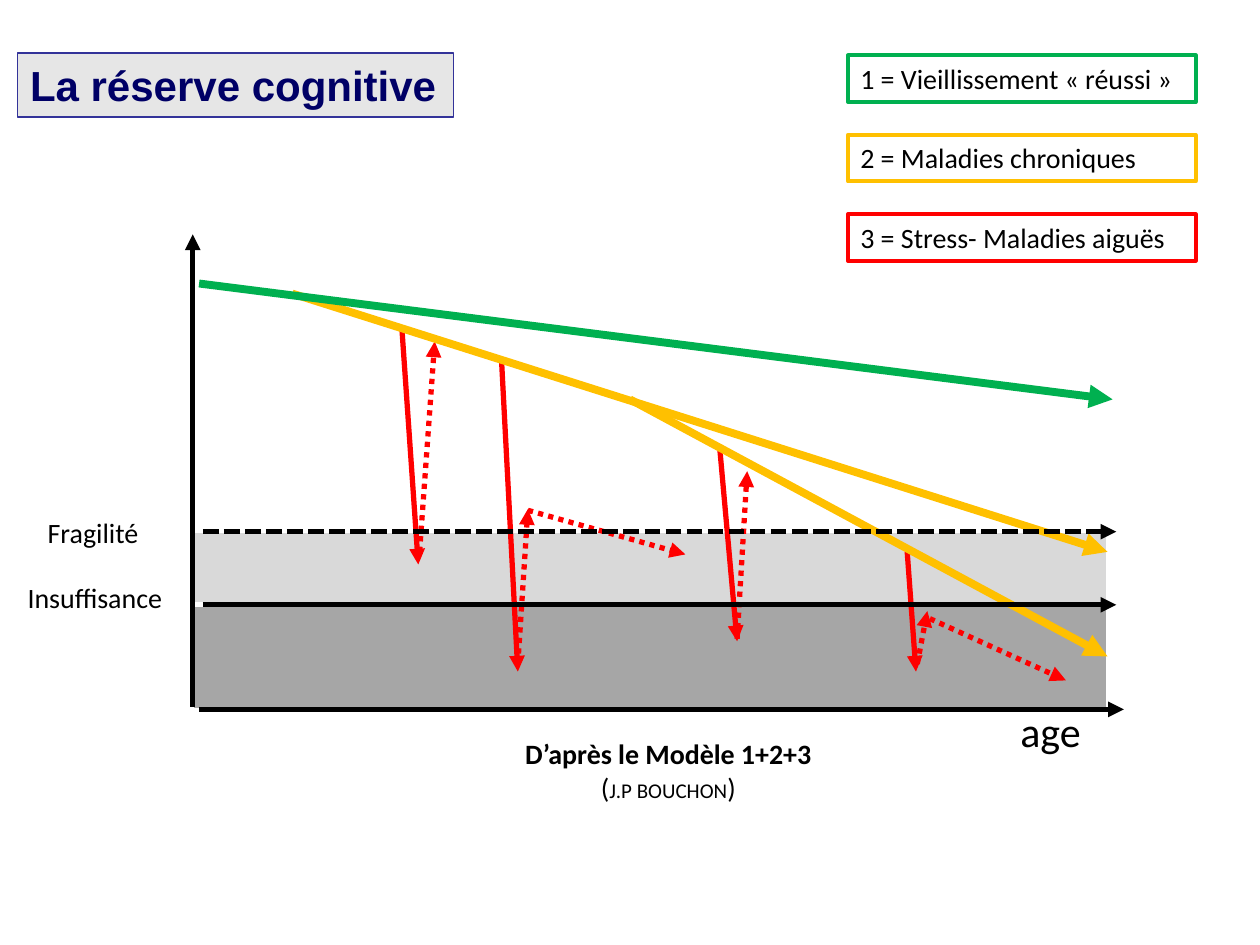
from lxml import etree
from pptx import Presentation
from pptx.dml.color import RGBColor
from pptx.enum.dml import MSO_LINE
from pptx.enum.shapes import MSO_CONNECTOR, MSO_SHAPE
from pptx.enum.text import MSO_ANCHOR, PP_ALIGN
from pptx.oxml.ns import qn
from pptx.util import Inches, Pt

BLACK = RGBColor(0x00, 0x00, 0x00)
WHITE = RGBColor(0xFF, 0xFF, 0xFF)
RED = RGBColor(0xFF, 0x00, 0x00)
AMBER = RGBColor(0xFF, 0xC0, 0x00)
GREEN = RGBColor(0x00, 0xB0, 0x50)
NAVY = RGBColor(0x00, 0x00, 0x66)
INDIGO = RGBColor(0x33, 0x33, 0x99)
PALE_GREY = RGBColor(0xE6, 0xE6, 0xE6)
LIGHT_GREY = RGBColor(0xD9, 0xD9, 0xD9)
MID_GREY = RGBColor(0xA6, 0xA6, 0xA6)

deck = Presentation()
deck.slide_width = Inches(10)
deck.slide_height = Inches(7.5)
page = deck.slides.add_slide(deck.slide_layouts[5])


def add_box(bounds, text="", size=16, fill=None, line=None, line_width=2.25, color=BLACK, font="Calibri"):
    box = page.shapes.add_shape(MSO_SHAPE.RECTANGLE, *map(Inches, bounds))
    box.shadow.inherit = False
    if fill is None:
        box.fill.background()
    else:
        box.fill.solid()
        box.fill.fore_color.rgb = fill
    if line is None:
        box.line.fill.background()
    else:
        box.line.color.rgb = line
        box.line.width = Pt(line_width)
    frame = box.text_frame
    frame.text = text
    frame.word_wrap = True
    frame.vertical_anchor = MSO_ANCHOR.TOP
    para = frame.paragraphs[0]
    para.alignment = PP_ALIGN.LEFT
    para.font.name = font
    para.font.size = Pt(size)
    para.font.color.rgb = color
    return box


def add_arrow(start, end, color=BLACK, width=3, dash=None):
    arrow = page.shapes.add_connector(MSO_CONNECTOR.STRAIGHT, *map(Inches, start + end))
    arrow.line.color.rgb = color
    arrow.line.width = Pt(width)
    if dash is not None:
        arrow.line.dash_style = dash
    etree.SubElement(arrow.line._get_or_add_ln(), qn("a:tailEnd"), type="triangle")
    etree.SubElement(arrow._element.spPr, qn("a:effectLst"))


caption = page.shapes.title
caption.left, caption.top = Inches(3.22), Inches(5.81)
caption.width, caption.height = Inches(4.17), Inches(0.61)
caption.text_frame.vertical_anchor = MSO_ANCHOR.MIDDLE
para = caption.text_frame.paragraphs[0]
para.alignment = PP_ALIGN.CENTER
for text, size, bold in [
    ("D’après le Modèle 1+2+3", 16, True),
    ("(", 16, False),
    ("J.P BOUCHON", 12, False),
    (")", 16, False),
]:
    span = para.add_run()
    span.text = text
    span.font.name = "Calibri"
    span.font.size = Pt(size)
    span.font.bold = bold
    span.font.color.rgb = BLACK
    if bold:
        para.add_line_break()

heading = add_box((0.14, 0.42, 3.46, 0.51), "La réserve cognitive", 24, PALE_GREY, INDIGO, 0.75, NAVY, "Arial")
heading.text_frame.word_wrap = False
heading.text_frame.paragraphs[0].font.bold = True

add_box((1.53, 4.22, 7.26, 0.57), fill=LIGHT_GREY, line=WHITE, line_width=2)
add_box((1.53, 4.8, 7.26, 0.83), fill=MID_GREY, line=WHITE, line_width=2)

legend = [
    ("1 = Vieillissement « réussi »", GREEN),
    ("2 = Maladies chroniques", AMBER),
    ("3 = Stress- Maladies aiguës", RED),
]
for row, (text, color) in enumerate(legend):
    add_box((6.73, 0.44 + 0.63 * row, 2.76, 0.37), text, line=color)

acute_drops = [
    ((5.71, 3.53), (5.85, 5.09)),
    ((3.19, 2.61), (3.32, 4.48)),
    ((7.2, 4.38), (7.27, 5.33)),
    ((3.98, 2.85), (4.11, 5.33)),
]
for start, end in acute_drops:
    add_arrow(start, end, RED)

recoveries = [
    ((5.85, 5.07), (5.93, 3.74)),
    ((3.33, 4.38), (3.45, 2.71)),
    ((7.28, 5.27), (7.36, 4.85)),
    ((4.11, 5.27), (4.19, 4.04)),
    ((4.19, 4.05), (5.44, 4.4)),
    ((7.38, 4.91), (8.46, 5.4)),
]
for start, end in recoveries:
    add_arrow(start, end, RED, dash=MSO_LINE.ROUND_DOT)

add_arrow((2.32, 2.33), (8.79, 4.38), AMBER, 4.5)
add_arrow((5, 3.17), (8.79, 5.21), AMBER, 4.5)

add_arrow((1.53, 5.61), (1.53, 1.86))
add_arrow((1.58, 5.63), (8.92, 5.63))
add_arrow((1.61, 4.8), (8.86, 4.8))
add_arrow((1.58, 2.25), (8.83, 3.17), GREEN, 4.5)
add_arrow((1.61, 4.22), (8.86, 4.22), dash=MSO_LINE.SQUARE_DOT)

add_box((8, 5.55, 1.58, 0.5), "age", 24)
add_box((0.12, 4.56, 1.61, 0.37), "Insuffisance")
add_box((0.28, 4.04, 1.61, 0.37), "Fragilité")

deck.save("out.pptx")
